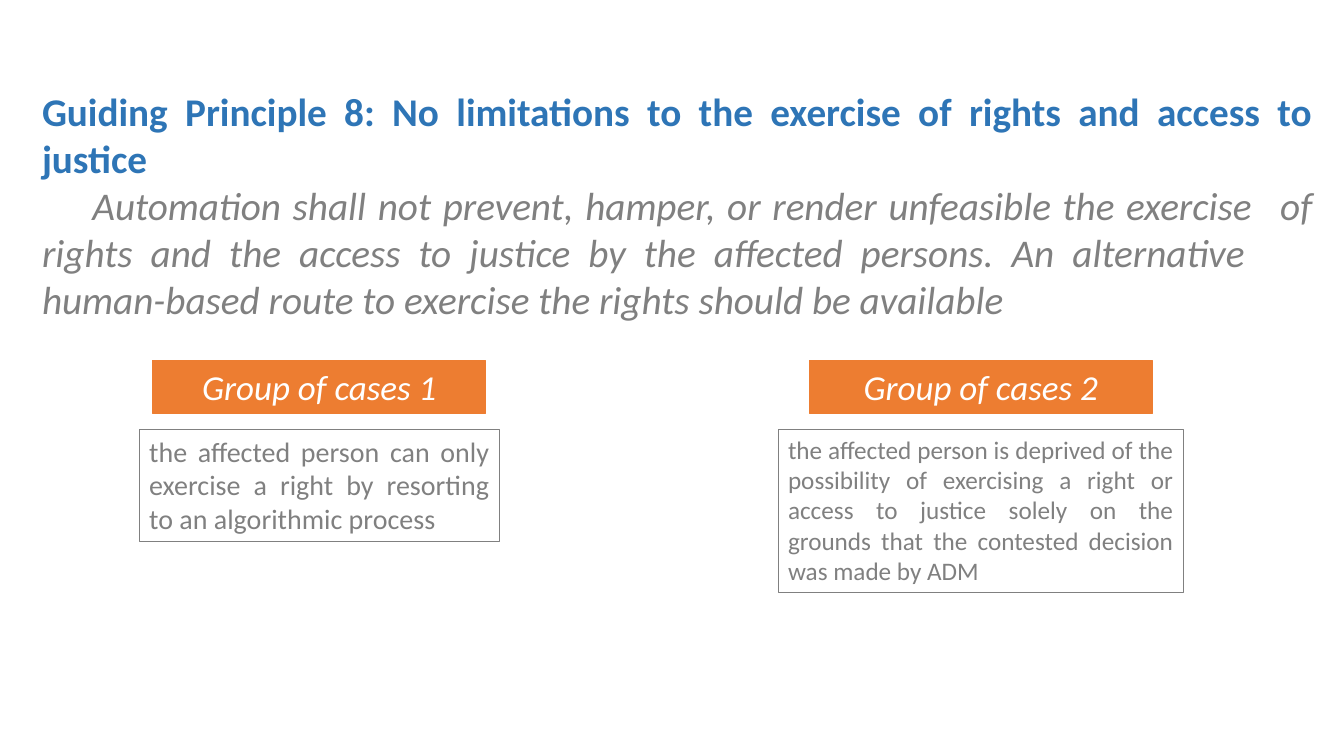
import pptx
import pptx.dml.color
import pptx.enum.shapes
import pptx.enum.text
import pptx.util

Cm = pptx.util.Cm
ALIGN = pptx.enum.text.PP_ALIGN
ANCHOR = pptx.enum.text.MSO_ANCHOR

BLUE = "2E75B6"
GREY = "808080"
ORANGE = "ED7D31"
WHITE = "FFFFFF"


def color(hex_string):
    return pptx.dml.color.RGBColor.from_string(hex_string)


def write(paragraph, text, size, hex_string, align, bold=False, italic=False):
    paragraph.text = text
    paragraph.alignment = align
    for run in paragraph.runs:
        run.font.name = "Calibri"
        run.font.size = pptx.util.Pt(size)
        run.font.bold = bold
        run.font.italic = italic
        run.font.color.rgb = color(hex_string)


def add_principle(slide, left, top, width, height, title, rule):
    principle = slide.shapes.add_textbox(Cm(left), Cm(top), Cm(width), Cm(height))
    frame = principle.text_frame
    frame.word_wrap = True
    frame.vertical_anchor = ANCHOR.BOTTOM
    write(frame.paragraphs[0], title, 28, BLUE, ALIGN.JUSTIFY, bold=True)
    write(frame.add_paragraph(), rule, 28, GREY, ALIGN.JUSTIFY, italic=True)


def add_panel(slide, left, top, width, height, fill, line):
    panel = slide.shapes.add_shape(
        pptx.enum.shapes.MSO_SHAPE.RECTANGLE, Cm(left), Cm(top), Cm(width), Cm(height))
    panel.shadow.inherit = False
    if fill:
        panel.fill.solid()
        panel.fill.fore_color.rgb = color(fill)
    else:
        panel.fill.background()
    panel.line.color.rgb = color(line)
    panel.line.width = pptx.util.Pt(0.75)
    panel.text_frame.word_wrap = True
    panel.text_frame.vertical_anchor = ANCHOR.TOP
    return panel.text_frame.paragraphs[0]


def add_case_group(slide, left, top, width, height, heading_width, heading, case, size):
    heading_height, gap = 1.32, 0.41
    heading_left = left + (width - heading_width) / 2
    label = add_panel(slide, heading_left, top, heading_width, heading_height, ORANGE, ORANGE)
    write(label, heading, 25, WHITE, ALIGN.CENTER, italic=True)
    case_top = top + heading_height + gap
    case_height = height - heading_height - gap
    description = add_panel(slide, left, case_top, width, case_height, None, GREY)
    write(description, case, size, GREY, ALIGN.JUSTIFY)


def main():
    presentation = pptx.Presentation()
    presentation.slide_width = Cm(33.87)
    presentation.slide_height = Cm(19.05)
    slide = presentation.slides.add_slide(presentation.slide_layouts[6])

    add_principle(
        slide, 0.81, 0.81, 32.51, 7.44,
        "Guiding Principle 8: No limitations to the exercise of rights and access to justice",
        "\tAutomation shall not prevent, hamper, or render unfeasible the exercise "
        "\tof rights and the access to justice by the affected persons. An alternative "
        "\thuman-based route to exercise the rights should be available")

    groups_top = 9.09
    add_case_group(
        slide, 3.51, groups_top, 9.07, 4.55, 8.38, "Group of cases 1",
        "the affected person can only exercise a right by resorting to an algorithmic process",
        20)
    add_case_group(
        slide, 19.61, groups_top, 10.21, 5.84, 8.64, "Group of cases 2",
        "the affected person is deprived of the possibility of exercising a right or access "
        "to justice solely on the grounds that the contested decision was made by ADM",
        18)

    presentation.save("out.pptx")


if __name__ == "__main__":
    main()
